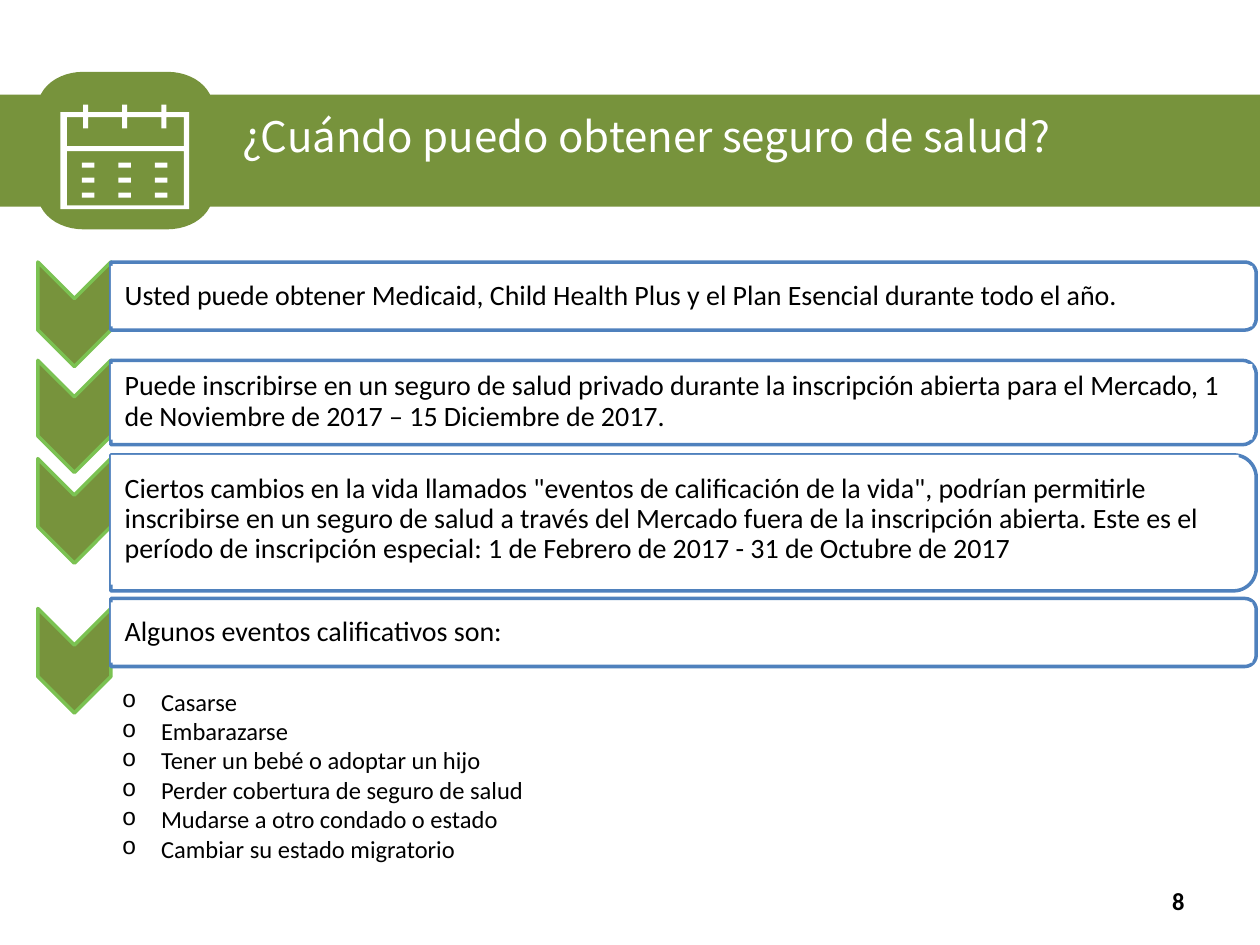
import math
from dataclasses import dataclass
from lxml import etree
from pptx import Presentation
from pptx import util as u
from pptx.dml.color import RGBColor
from pptx.enum import shapes as kinds, text
from pptx.oxml.ns import qn

TITLE = "¿Cuándo puedo obtener seguro de salud?"
PAGE_NUMBER = "8"
STEPS = [
    dict(message="Usted puede obtener Medicaid, Child Health Plus y el Plan Esencial durante todo el año.",
         panel=(2.08, 0.54), label=(2.11, 9.06, 0.48), arrow=(2.08, 0.83)),
    dict(message="Puede inscribirse en un seguro de salud privado durante la inscripción abierta para el Mercado, "
                 "1 de Noviembre de 2017 – 15 Diciembre de 2017.",
         panel=(2.86, 0.67), label=(2.89, 9.06, 0.6), arrow=(2.86, 0.89)),
    dict(message='Ciertos cambios en la vida llamados "eventos de calificación de la vida", podrían permitirle '
                 "inscribirse en un seguro de salud a través del Mercado fuera de la inscripción abierta. "
                 "Este es el período de inscripción especial: 1 de Febrero de 2017 - 31 de Octubre de 2017",
         panel=(3.61, 1.08), label=(3.61, 8.95, 1.03), arrow=(3.64, 0.83)),
    dict(message="Algunos eventos calificativos son:",
         panel=(4.75, 0.54), label=(4.78, 9.06, 0.48), arrow=(4.83, 0.83)),
]
EVENTS = [
    "Casarse",
    "Embarazarse",
    "Tener un bebé o adoptar un hijo",
    "Perder cobertura de seguro de salud",
    "Mudarse a otro condado o estado",
    "Cambiar su estado migratorio",
]


@dataclass(frozen=True)
class Theme:
    green: str = "77933C"
    edge: str = "7BC252"
    blue: str = "4F81BD"
    white: str = "FFFFFF"
    black: str = "000000"
    title_font: str = "Noto Sans CJK JP"
    body_font: str = "Calibri"
    title: int = 24
    body: int = 16
    small: int = 14
    outline: int = 2


THEME = Theme()
ARROW_LEFT, ARROW_WIDTH = 0.3, 0.58
PANEL_LEFT, PANEL_WIDTH = 0.88, 9.09
LABEL_LEFT = 0.88
EVENT_INDENT = 0.31


def paint(shape, fill, line=None):
    shape.shadow.inherit = False
    shape.fill.solid()
    shape.fill.fore_color.rgb = RGBColor.from_string(fill)
    if line:
        shape.line.color.rgb = RGBColor.from_string(line)
        shape.line.width = u.Pt(THEME.outline)
    else:
        shape.line.fill.background()
    return shape


def add_preset(parent, preset, box, fill, line=None):
    return paint(parent.add_shape(preset, *map(u.Inches, box)), fill, line)


def add_turned(parent, preset, box, fill, line):
    left, top, width, height = box
    unturned = (left + (width - height) / 2, top + (height - width) / 2, height, width)
    turned = add_preset(parent, preset, unturned, fill, line)
    turned.rotation = 90
    return turned


def add_outline(parent, contours, fill):
    contours = [[(u.Inches(x), u.Inches(y)) for x, y in contour] for contour in contours]
    builder = parent.build_freeform(*contours[0][0])
    for index, contour in enumerate(contours):
        if index:
            builder.move_to(*contour[0])
        builder.add_line_segments(contour[1:], close=True)
    return paint(builder.convert_to_shape(), fill)


def write(shape, lines, frame_format, size, color=THEME.black, font=THEME.body_font,
          bold=False, paragraph_format=None):
    frame = shape.text_frame
    for name, value in dict(word_wrap=True, **frame_format).items():
        setattr(frame, name, value)
    for index, line in enumerate(lines):
        paragraph = frame.add_paragraph() if index else frame.paragraphs[0]
        for name, value in dict(dict(alignment=text.PP_ALIGN.LEFT), **(paragraph_format or {})).items():
            setattr(paragraph, name, value)
        run = paragraph.add_run()
        run.text = line
        for name, value in dict(name=font, size=u.Pt(size), bold=bold).items():
            setattr(run.font, name, value)
        run.font.color.rgb = RGBColor.from_string(color)
    return frame


def add_badge(parent):
    left, top, right, bottom = 0.3, 0.57, 1.69, 1.82
    radius_x, radius_y = 0.36, 0.28
    corners = [(right - radius_x, bottom - radius_y), (left + radius_x, bottom - radius_y),
               (left + radius_x, top + radius_y), (right - radius_x, top + radius_y)]
    edge = []
    for quarter, (x, y) in enumerate(corners):
        for step in range(13):
            angle = math.radians(90 * quarter + 7.5 * step)
            edge.append((x + radius_x * math.cos(angle), y + radius_y * math.sin(angle)))
    add_outline(parent, [edge], THEME.green)


def notched(left, right, base, top, notch):
    ring_starts = (0.66, 0.97, 1.28)
    ring_width = 0.04
    edge = [(left, base), (left, top)]
    for start in ring_starts:
        end = start + ring_width
        edge += [(start, top), (start, notch), (end, notch), (end, top)]
    return edge + [(right, top), (right, base)]


def add_calendar(parent):
    calendar = parent.add_group_shape().shapes
    page = [(0.53, 1.2), (0.53, 1.63), (1.46, 1.63), (1.46, 1.2)]
    header = notched(0.53, 1.46, 1.16, 0.93, 1.02)
    cover = notched(0.48, 1.5, 1.66, 0.89, 0.83)
    add_outline(calendar, [page, header, cover[::-1]], THEME.white)
    for column in range(3):
        for row in range(3):
            day = (0.65 + 0.29 * column, 1.29 + 0.12 * row, 0.1, 0.04)
            add_preset(calendar, kinds.MSO_SHAPE.RECTANGLE, day, THEME.white)


def add_step(parent, step):
    arrow_top, arrow_height = step["arrow"]
    add_turned(parent, kinds.MSO_SHAPE.CHEVRON, (ARROW_LEFT, arrow_top, ARROW_WIDTH, arrow_height),
               THEME.green, THEME.edge)
    panel_top, panel_height = step["panel"]
    panel = parent.add_group_shape().shapes
    add_turned(panel, kinds.MSO_SHAPE.ROUND_2_SAME_RECTANGLE,
               (PANEL_LEFT, panel_top, PANEL_WIDTH, panel_height), THEME.white, THEME.blue)
    label = add_preset(panel, kinds.MSO_SHAPE.RECTANGLE, (LABEL_LEFT, *step["label"]), THEME.white)
    thin = u.Inches(0.01)
    write(label, [step["message"]],
          dict(vertical_anchor=text.MSO_ANCHOR.MIDDLE, margin_left=u.Inches(0.11),
               margin_top=thin, margin_right=thin, margin_bottom=thin),
          THEME.body, paragraph_format=dict(line_spacing=0.9))


def add_events(parent):
    events = parent.add_textbox(*map(u.Inches, (0.87, 5.4, 9.13, 1.51)))
    frame = write(events, EVENTS, dict(auto_size=text.MSO_AUTO_SIZE.SHAPE_TO_FIT_TEXT), THEME.small)
    for paragraph in frame.paragraphs:
        properties = paragraph._p.get_or_add_pPr()
        properties.set("marL", str(u.Inches(EVENT_INDENT)))
        properties.set("indent", str(-u.Inches(EVENT_INDENT)))
        etree.SubElement(properties, qn("a:buFont"), typeface="Courier New")
        etree.SubElement(properties, qn("a:buChar"), char="o")


def main():
    deck = Presentation()
    deck.slide_width, deck.slide_height = u.Inches(10), u.Inches(7.5)
    parts = deck.slides.add_slide(deck.slide_layouts[6]).shapes
    add_badge(parts)
    add_preset(parts, kinds.MSO_SHAPE.RECTANGLE, (-0.17, 0.75, 10.92, 0.89), THEME.green)
    add_calendar(parts)
    heading = parts.add_textbox(*map(u.Inches, (1.83, 0.83, 7.33, 0.5)))
    write(heading, [TITLE], dict(auto_size=text.MSO_AUTO_SIZE.SHAPE_TO_FIT_TEXT),
          THEME.title, THEME.white, THEME.title_font)
    for step in STEPS:
        add_step(parts, step)
    add_events(parts)
    number = parts.add_textbox(*map(u.Inches, (7.17, 6.95, 2.33, 0.4)))
    write(number, [PAGE_NUMBER], dict(vertical_anchor=text.MSO_ANCHOR.MIDDLE), THEME.small,
          bold=True, paragraph_format=dict(alignment=text.PP_ALIGN.RIGHT))
    deck.save("out.pptx")


if __name__ == "__main__":
    main()
